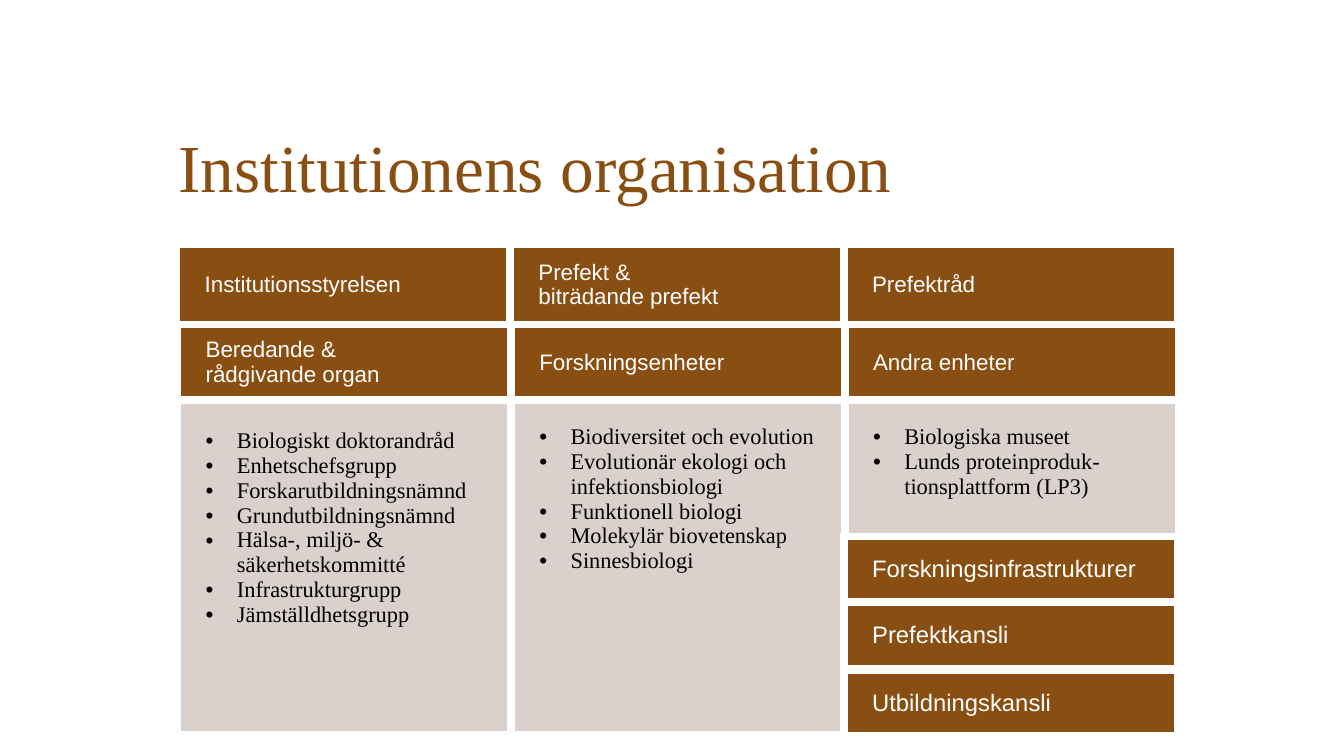
from lxml.etree import SubElement
from pptx import Presentation
from pptx.dml.color import RGBColor
from pptx.enum.text import MSO_ANCHOR as ANCHOR
from pptx.oxml.ns import qn
from pptx.util import Pt

PX = 9144  # EMU in one px, 100 px to the inch
BROWN = RGBColor(0x89, 0x4E, 0x11)
BEIGE = RGBColor(0xDA, 0xD0, 0xCC)
WHITE = RGBColor(0xFF, 0xFF, 0xFF)
BLACK = RGBColor(0, 0, 0)
SANS, SERIF = "Arial", "Times New Roman"

TOP_ROW = ["Institutionsstyrelsen", "Prefekt &\nbiträdande prefekt", "Prefektråd"]
HEADINGS = ["Beredande &\vrådgivande organ", "Forskningsenheter", "Andra enheter"]
LISTS = [
    "Biologiskt doktorandråd\nEnhetschefsgrupp\nForskarutbildningsnämnd\n"
    "Grundutbildningsnämnd\nHälsa-, miljö- & säkerhetskommitté\n"
    "Infrastrukturgrupp\nJämställdhetsgrupp",
    "Biodiversitet och evolution\nEvolutionär ekologi och infektionsbiologi\n"
    "Funktionell biologi\nMolekylär biovetenskap\nSinnesbiologi",
    "Biologiska museet\nLunds proteinproduk-tionsplattform (LP3)",
]
OFFICES = ["Forskningsinfrastrukturer", "Prefektkansli", "Utbildningskansli"]


def put_text(tf, text, size=16, font=SANS, color=WHITE, bullet=False, spacing=None):
    """Fill a text frame: newline starts a paragraph, \\v breaks a line."""
    tf.word_wrap = True
    for i, line in enumerate(text.split("\n")):
        p = tf.add_paragraph() if i else tf.paragraphs[0]
        p.text = line
        p.line_spacing = spacing
        if bullet:
            pPr = p._p.get_or_add_pPr()
            pPr.set("marL", str(31 * PX))
            pPr.set("indent", str(-31 * PX))
            SubElement(pPr, qn("a:buFont"), typeface="Arial")
            SubElement(pPr, qn("a:buChar"), char="•")
        for r in p.runs:
            r.font.size, r.font.name = Pt(size), font
            r.font.color.rgb = color
        for br in p._p.findall(qn("a:br")):
            SubElement(br, qn("a:rPr"), sz=str(size * 100))


class Deck:
    """Current slide and the shared style of its elements."""

    def __init__(self, width, height):
        self.prs = Presentation()
        self.prs.slide_width, self.prs.slide_height = width * PX, height * PX
        self.s = self.prs.slides.add_slide(self.prs.slide_layouts[6])

    def title(self, x, y, w, h, text):
        tf = self.s.shapes.add_textbox(x * PX, y * PX, w * PX, h * PX).text_frame
        tf.margin_left = tf.margin_top = tf.margin_right = 0
        tf.margin_bottom = 31 * PX
        tf.vertical_anchor = ANCHOR.BOTTOM
        put_text(tf, text, size=48, font=SERIF, color=BROWN, spacing=0.9)

    def table(self, x, y, col_w, heights, rows, size=16):
        """Row 0 holds headings, any later row holds bulleted lists."""
        n = len(rows[0])
        frame = self.s.shapes.add_table(len(rows), n, x * PX, y * PX,
                                        n * col_w * PX, sum(heights) * PX)
        tbl = frame.table
        tbl.first_row = tbl.horz_banding = False
        for col in tbl.columns:
            col.width = col_w * PX
        for i, (height, texts) in enumerate(zip(heights, rows)):
            tbl.rows[i].height = height * PX
            for j, text in enumerate(texts):
                self.cell(tbl.cell(i, j), text, size, is_list=i > 0, first=j == 0)

    def cell(self, cell, text, size, is_list, first):
        tcPr = cell._tc.get_or_add_tcPr()
        for side in ("L", "R", "T", "B"):
            ln = SubElement(tcPr, qn(f"a:ln{side}"), w=str(Pt(6)))
            fill = SubElement(ln, qn("a:solidFill"))
            SubElement(fill, qn("a:srgbClr"), val=str(WHITE))
        cell.fill.solid()
        cell.fill.fore_color.rgb = BEIGE if is_list else BROWN
        cell.margin_left, cell.margin_right = 28 * PX, 10 * PX
        cell.margin_top = cell.margin_bottom = 5 * PX
        if is_list:
            cell.margin_top = (28 if first else 24) * PX
            cell.vertical_anchor = ANCHOR.TOP
            put_text(cell.text_frame, text, size, SERIF, BLACK, bullet=True)
        else:
            cell.vertical_anchor = ANCHOR.MIDDLE
            put_text(cell.text_frame, text, size)


def main():
    deck = Deck(1333, 750)
    deck.title(177, 39, 965, 197, "Institutionens organisation")

    # Governing bodies, then units with their lists
    deck.table(175, 242, 331, [81], [TOP_ROW])
    deck.table(176, 322, 331, [75, 332], [HEADINGS, LISTS])

    # Offices stacked over the foot of the last column
    for y, office in zip((532, 598, 665), OFFICES):
        deck.table(837, y, 331, [65], [[office]], size=17)

    deck.prs.save("out.pptx")


if __name__ == "__main__":
    main()
